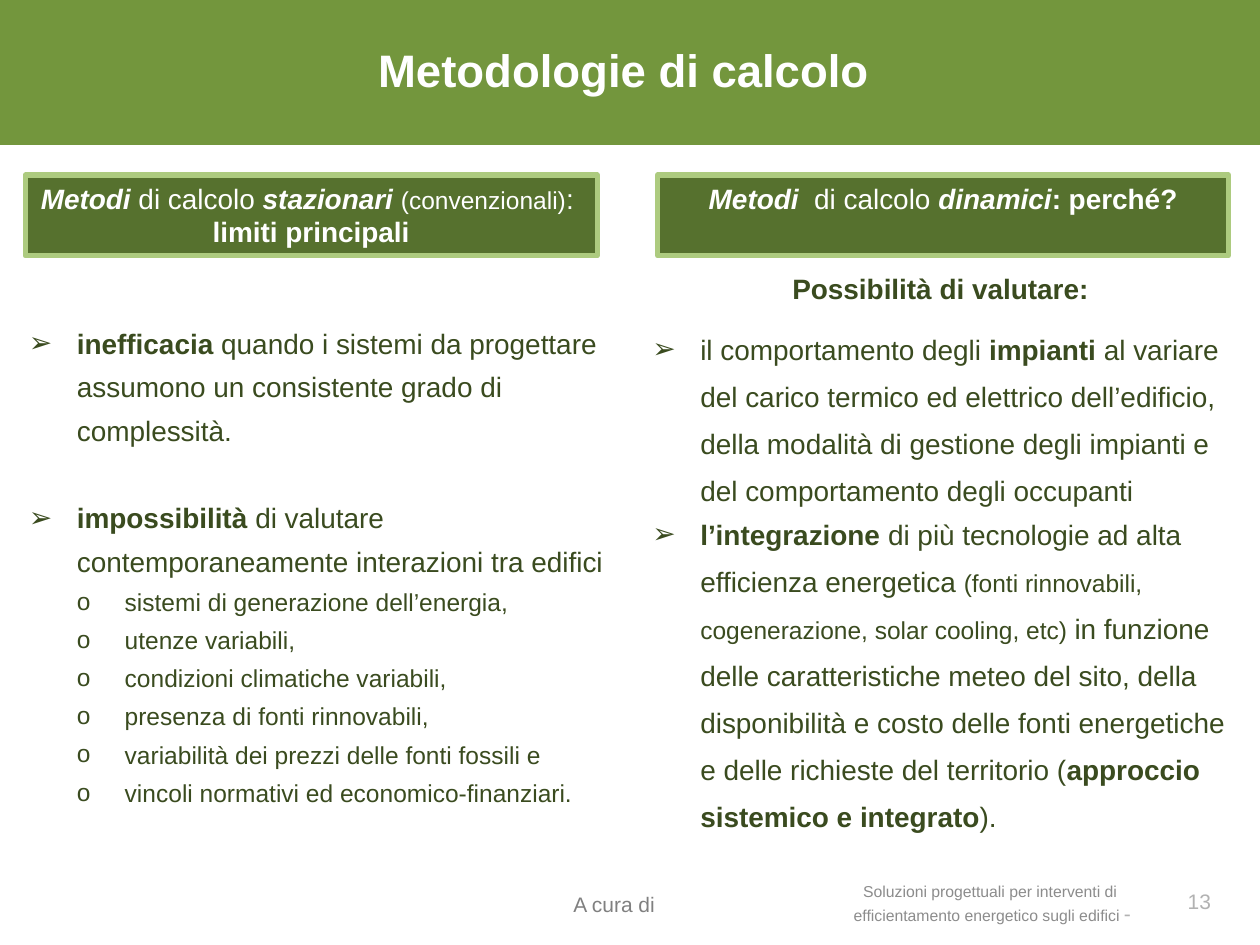
from lxml.etree import SubElement
from pptx import Presentation
from pptx.dml.color import RGBColor as RGB
from pptx.enum.shapes import MSO_SHAPE as SHAPE
from pptx.enum.text import MSO_ANCHOR as ANCHOR, PP_ALIGN as ALIGN
from pptx.oxml.ns import qn
from pptx.util import Inches, Pt

COLORS = {
    "band": "73963D", "panel": "56712E", "edge": "ADCB7F", "body": "3A4B1F",
    "white": "FFFFFF", "author": "808080", "course": "8C8C8C", "number": "B2B2B2",
}
COLS, ROWS = 100, 75
prs = Presentation()
prs.slide_width, prs.slide_height = Inches(10), Inches(7.5)
COL, ROW = prs.slide_width / COLS, prs.slide_height / ROWS
HANG = 3.8
INSET = (1, 0.5, 1, 0.5)

BOLD, ITALIC = {"bold": True}, {"bold": True, "italic": True}
SMALL = {"size": Pt(14)}


def grid(box):
    x, y, w, h = box
    return [int(v) for v in (x * COL, y * ROW, w * COL, h * ROW)]


def set_frame(tf, inset=INSET, anchor=ANCHOR.TOP):
    l, t, r, b = inset
    values = {
        "word_wrap": True, "vertical_anchor": anchor,
        "margin_left": int(l * COL), "margin_top": int(t * ROW),
        "margin_right": int(r * COL), "margin_bottom": int(b * ROW),
    }
    for name, value in values.items():
        setattr(tf, name, value)
    return tf


def text_box(s, box, **frame):
    return set_frame(s.shapes.add_textbox(*grid(box)).text_frame, **frame)


def rectangle(s, box, fill, edge=None):
    sp = s.shapes.add_shape(SHAPE.RECTANGLE, *grid(box))
    sp.shadow.inherit = False
    sp.fill.solid()
    sp.fill.fore_color.rgb = RGB.from_string(COLORS[fill])
    if edge:
        sp.line.color.rgb = RGB.from_string(COLORS[edge])
        sp.line.width = Pt(3)
    else:
        sp.line.fill.background()
    return sp


def set_bullet(p, char, level):
    pPr = p._p.get_or_add_pPr()
    pPr.set("marL", str(int(HANG * level * COL)))
    pPr.set("indent", str(-int(HANG * COL)))
    SubElement(pPr, qn("a:buFont"), typeface="Arial")
    SubElement(pPr, qn("a:buChar"), char=char)


def write(tf, runs, color, size=16, bullet=None, level=1, **layout):
    p = tf.paragraphs[0]
    if p.runs:
        p = tf.add_paragraph()
    for name, value in layout.items():
        setattr(p, name, value)
    if bullet:
        set_bullet(p, bullet, level)
    for text, extra in runs:
        for i, line in enumerate(text.split("\n")):
            if i:
                p.add_line_break()
            if not line:
                continue
            r = p.add_run()
            r.text = line
            values = {"name": "Arial", "size": Pt(size), "bold": False, "italic": False} | extra
            for name, value in values.items():
                setattr(r.font, name, value)
            r.font.color.rgb = RGB.from_string(COLORS[color])
    return p


def title_band(s, box):
    x, y, w, h = box
    rectangle(s, box, "band")
    tf = text_box(s, (x + 4.5, y + 3.3, w - 10, 4.4), inset=(1, 0, 1, 0), anchor=ANCHOR.MIDDLE)
    write(tf, [("Metodologie di calcolo", BOLD)], "white", 26, alignment=ALIGN.CENTER)


def method_panel(s, box, runs):
    sp = rectangle(s, box, "panel", "edge")
    write(set_frame(sp.text_frame), runs, "white", alignment=ALIGN.CENTER)


def stationary_column(s, box):
    x, y, w, h = box
    method_panel(s, (x + 0.1, y, 45.4, 6.4), [
        ("Metodi", ITALIC), (" di calcolo ", {}), ("stazionari ", ITALIC),
        ("(convenzionali)", SMALL), (": \n", {}), ("limiti principali", BOLD)])
    tf = text_box(s, (x, y + 10.7, w, h - 10.7), inset=(0.4, 0.5, 0.4, 0.5))
    limits = [
        ("inefficacia", " quando i sistemi da progettare assumono un consistente grado di complessità."),
        ("impossibilità", " di valutare contemporaneamente interazioni tra edifici"),
    ]
    for i, (key, rest) in enumerate(limits):
        write(tf, [(key, BOLD), (rest, {})], "body", bullet="➢",
              line_spacing=1.3, space_before=Pt(25 * i))
    factors = [
        "sistemi di generazione dell’energia,", "utenze variabili,",
        "condizioni climatiche variabili,", "presenza di fonti rinnovabili,",
        "variabilità dei prezzi delle fonti fossili e",
        "vincoli normativi ed economico-finanziari.",
    ]
    for factor in factors:
        write(tf, [(factor, {})], "body", 14, bullet="o", level=2, line_spacing=1.3)


def dynamic_column(s, box):
    x, y, w, h = box
    method_panel(s, (x + 1.4, y, 45.3, 6.4), [
        ("Metodi", ITALIC), ("  di calcolo ", {}), ("dinamici", ITALIC), (": perché?", BOLD)])
    tf = text_box(s, (x, y + 6.1, w, 20.8))
    write(tf, [("Possibilità di valutare:", BOLD)], "body",
          alignment=ALIGN.CENTER, line_spacing=1.4)
    write(tf, [
        ("il comportamento degli ", {}), ("impianti", BOLD),
        (" al variare del carico termico ed elettrico dell’edificio, della modalità di gestione "
         "degli impianti e del comportamento degli occupanti", {}),
    ], "body", bullet="➢", line_spacing=1.4, space_before=Pt(8))
    tf = text_box(s, (x, y + 25.6, w, h - 25.6))
    write(tf, [
        ("l’integrazione", BOLD), (" di più tecnologie ad alta efficienza energetica ", {}),
        ("(fonti rinnovabili, cogenerazione, solar cooling, etc) ", SMALL),
        ("in funzione delle caratteristiche meteo del sito, della disponibilità e costo delle "
         "fonti energetiche e delle richieste del territorio (", {}),
        ("approccio sistemico e integrato", BOLD), (").", {}),
    ], "body", bullet="➢", line_spacing=1.4)


def footer(s, box):
    x, y, w, h = box
    frame = {"inset": (0, 0.5, 1, 0), "anchor": ANCHOR.MIDDLE}
    tf = text_box(s, (x, y, 22, h), **frame)
    write(tf, [("A cura di", {})], "author", 12)
    tf = text_box(s, (x + 21.6, y, 24.3, h), **frame)
    p = write(tf, [
        ("Soluzioni progettuali per interventi di \nefficientamento energetico sugli edifici ", {}),
        ("-", {"size": Pt(12)}),
    ], "course", 9, alignment=ALIGN.CENTER)
    p.runs[-1].font.color.rgb = RGB.from_string(COLORS["number"])
    tf = text_box(s, (x + 45.9, y, w - 45.9, h), anchor=ANCHOR.MIDDLE)
    write(tf, [("13", {})], "number", 12, alignment=ALIGN.RIGHT)


def main():
    s = prs.slides.add_slide(prs.slide_layouts[6])
    title_band(s, (0, 0, COLS, 11.5))
    stationary_column(s, (1.9, 13.9, 46.7, 51.1))
    dynamic_column(s, (50.8, 13.9, 47.7, 52.6))
    footer(s, (45.5, 69.5, 51.6, 4))
    prs.save("out.pptx")


if __name__ == "__main__":
    main()
